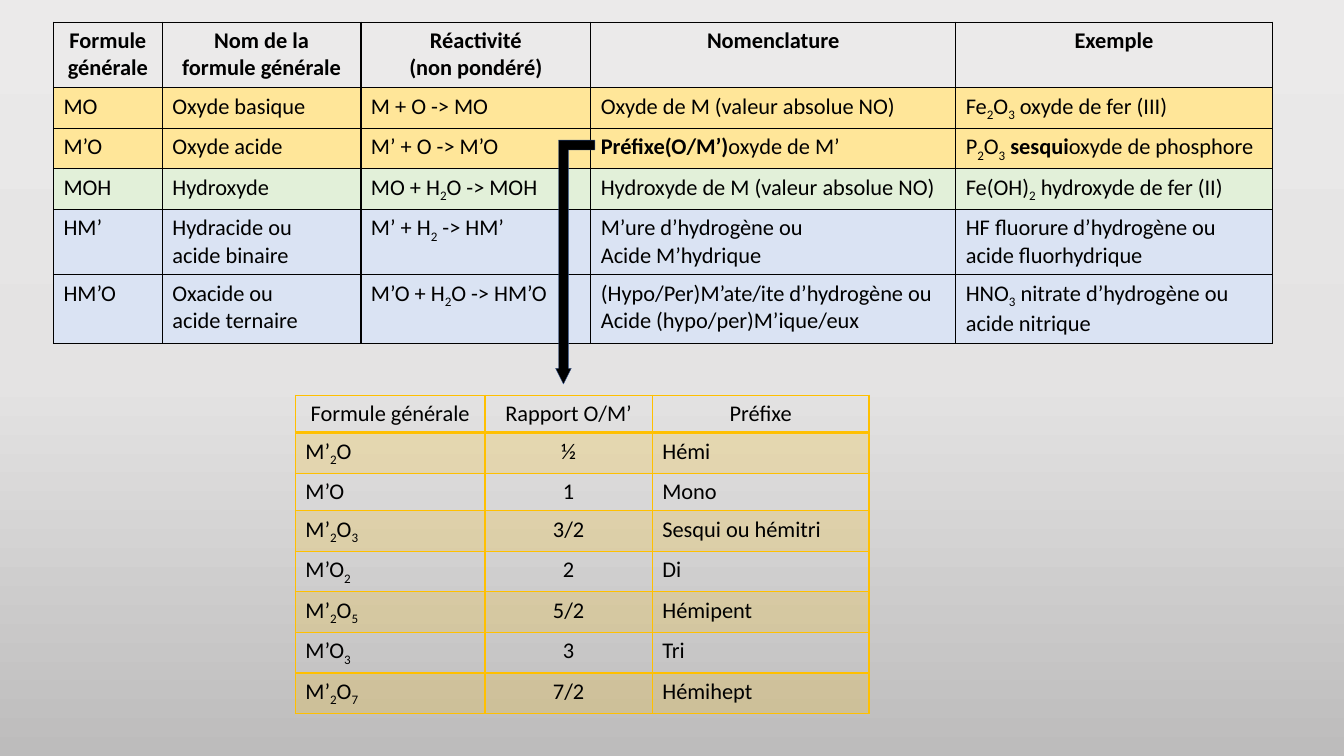
from copy import deepcopy

from lxml import etree
from pptx import Presentation
from pptx.dml.color import RGBColor
from pptx.enum.shapes import MSO_SHAPE
from pptx.enum.text import PP_ALIGN
from pptx.oxml.ns import qn
from pptx.util import Inches, Pt

CENTER = PP_ALIGN.CENTER
LEFT = PP_ALIGN.LEFT
BENT_ARROW = MSO_SHAPE.BENT_UP_ARROW

BLACK = "000000"
GOLD = "FFC000"
YELLOW = "FFE699"
GREEN = "E2F0D9"
BLUE = "DAE3F3"
FONT = {"name": "Calibri", "size": Pt(16)}
BACKGROUND_STOPS = [(0, "EBEAEA"), (0.5, "E4E3E3"), (1, "BDBCBC")]

OXIDE_FAMILIES = {
    "box": (0.53, 0.22),
    "columns": [1.08, 1.97, 2.28, 3.62, 3.14],
    "heights": [0.65, 0.4, 0.4, 0.4, 0.65, 0.68],
    "border": BLACK,
    "header_rule": 1,
    "fills": [None, YELLOW, YELLOW, GREEN, BLUE, BLUE],
    "alpha": 100,
    "centered": [],
    "rows": [
        ["*Formule générale*", "*Nom de la*\n*formule générale*",
         "*Réactivité*\n*(non pondéré)*", "*Nomenclature*", "*Exemple*"],
        ["MO", "Oxyde basique", "M + O -> MO",
         "Oxyde de M (valeur absolue NO)", "Fe_2O_3 oxyde de fer (III)"],
        ["M’O", "Oxyde acide", "M’ + O -> M’O",
         "*Préfixe(O/M’)*oxyde de M’", "P_2O_3 *sesqui*oxyde de phosphore"],
        ["MOH", "Hydroxyde", "MO + H_2O -> MOH",
         "Hydroxyde de M (valeur absolue NO)", "Fe(OH)_2 hydroxyde de fer (II)"],
        ["HM’", "Hydracide ou\nacide binaire", "M’ + H_2 -> HM’",
         "M’ure d’hydrogène ou\nAcide M’hydrique",
         "HF fluorure d’hydrogène ou\nacide fluorhydrique"],
        ["HM’O", "Oxacide ou\nacide ternaire", "M’O + H_2O -> HM’O",
         "(Hypo/Per)M’ate/ite d’hydrogène ou Acide (hypo/per)M’ique/eux",
         "HNO_3 nitrate d’hydrogène ou acide nitrique"],
    ],
}

PREFIXES = {
    "box": (2.93, 3.92),
    "columns": [1.88, 1.66, 2.15],
    "heights": [0.37] * 8,
    "border": GOLD,
    "header_rule": 2,
    "fills": [None, GOLD] * 4,
    "alpha": 20,
    "centered": [1],
    "rows": [
        ["Formule générale", "Rapport O/M’", "Préfixe"],
        ["M’_2O", "½", "Hémi"],
        ["M’O", "1", "Mono"],
        ["M’_2O_3", "3/2", "Sesqui ou hémitri"],
        ["M’O_2", "2", "Di"],
        ["M’_2O_5", "5/2", "Hémipent"],
        ["M’O_3", "3", "Tri"],
        ["M’_2O_7", "7/2", "Hémihept"],
    ],
}


def color(hex_string):
    return RGBColor.from_string(hex_string)


def add_run(paragraph, text, bold, subscript=False):
    if not text:
        return
    run = paragraph.add_run()
    run.text = text
    for name, value in {**FONT, "bold": bold}.items():
        setattr(run.font, name, value)
    run.font.color.rgb = color(BLACK)
    if subscript:
        run.font._element.set("baseline", "-25000")


def write_formula(paragraph, markup):
    for index, part in enumerate(markup.split("*")):
        bold = index % 2 == 1
        plain, *indexed = part.split("_")
        add_run(paragraph, plain, bold)
        for piece in indexed:
            add_run(paragraph, piece[0], bold, subscript=True)
            add_run(paragraph, piece[1:], bold)


def write_cell(cell, markup, alignment):
    frame = cell.text_frame
    for index, line in enumerate(markup.split("\n")):
        paragraph = frame.add_paragraph() if index else frame.paragraphs[0]
        paragraph.alignment = alignment
        write_formula(paragraph, line)


def set_borders(cell, hex_string, widths):
    properties = cell._tc.get_or_add_tcPr()
    for side, width in widths.items():
        line = etree.SubElement(properties, qn(f"a:ln{side}"), w=str(Pt(width)))
        solid = etree.SubElement(line, qn("a:solidFill"))
        etree.SubElement(solid, qn("a:srgbClr"), val=hex_string)


def fill_cell(cell, hex_string, alpha):
    if hex_string is None:
        cell.fill.background()
        return
    cell.fill.solid()
    cell.fill.fore_color.rgb = color(hex_string)
    if alpha < 100:
        tint = cell._tc.tcPr.find(qn("a:solidFill")).find(qn("a:srgbClr"))
        etree.SubElement(tint, qn("a:alpha"), val=str(alpha * 1000))


def add_formula_table(slide, content):
    left, top = content["box"]
    columns, heights, rows = content["columns"], content["heights"], content["rows"]
    table = slide.shapes.add_table(
        len(rows), len(columns), Inches(left), Inches(top),
        Inches(sum(columns)), Inches(sum(heights))).table
    for name, value in {"first_row": False, "horz_banding": False}.items():
        setattr(table, name, value)
    for column, width in zip(table.columns, columns):
        column.width = Inches(width)
    for row, height in zip(table.rows, heights):
        row.height = Inches(height)
    for row_index, texts in enumerate(rows):
        rule = content["header_rule"]
        widths = {"L": 1, "R": 1, "T": rule if row_index == 1 else 1,
                  "B": rule if row_index == 0 else 1}
        for column_index, markup in enumerate(texts):
            cell = table.cell(row_index, column_index)
            centered = row_index == 0 or column_index in content["centered"]
            write_cell(cell, markup, CENTER if centered else LEFT)
            set_borders(cell, content["border"], widths)
            fill_cell(cell, content["fills"][row_index], content["alpha"])


def add_prefix_arrow(slide, left, top, width, height):
    arrow = slide.shapes.add_shape(
        BENT_ARROW, Inches(left), Inches(top), Inches(width), Inches(height))
    arrow.rotation = 180
    arrow.shadow.inherit = False
    for index, value in enumerate([0.25, 0.2, 0.4]):
        arrow.adjustments[index] = value
    arrow.fill.solid()
    arrow.fill.fore_color.rgb = color(BLACK)
    arrow.line.color.rgb = color("325491")
    arrow.line.width = Pt(0.25)


def paint_background(slide):
    fill = slide.background.fill
    fill.gradient()
    fill.gradient_angle = 270
    stop_list = next(slide._element.iter(qn("a:gsLst")))
    stop_list.insert(1, deepcopy(stop_list[0]))
    for stop, (position, hex_string) in zip(fill.gradient_stops, BACKGROUND_STOPS):
        stop.position = position
        stop.color.rgb = color(hex_string)


def main():
    presentation = Presentation()
    presentation.slide_width = Inches(13.33)
    presentation.slide_height = Inches(7.5)
    slide = presentation.slides.add_slide(presentation.slide_layouts[6])
    paint_background(slide)
    for content in (OXIDE_FAMILIES, PREFIXES):
        add_formula_table(slide, content)
    add_prefix_arrow(slide, 5.51, 1.39, 0.39, 2.42)
    presentation.save("out.pptx")


if __name__ == "__main__":
    main()
